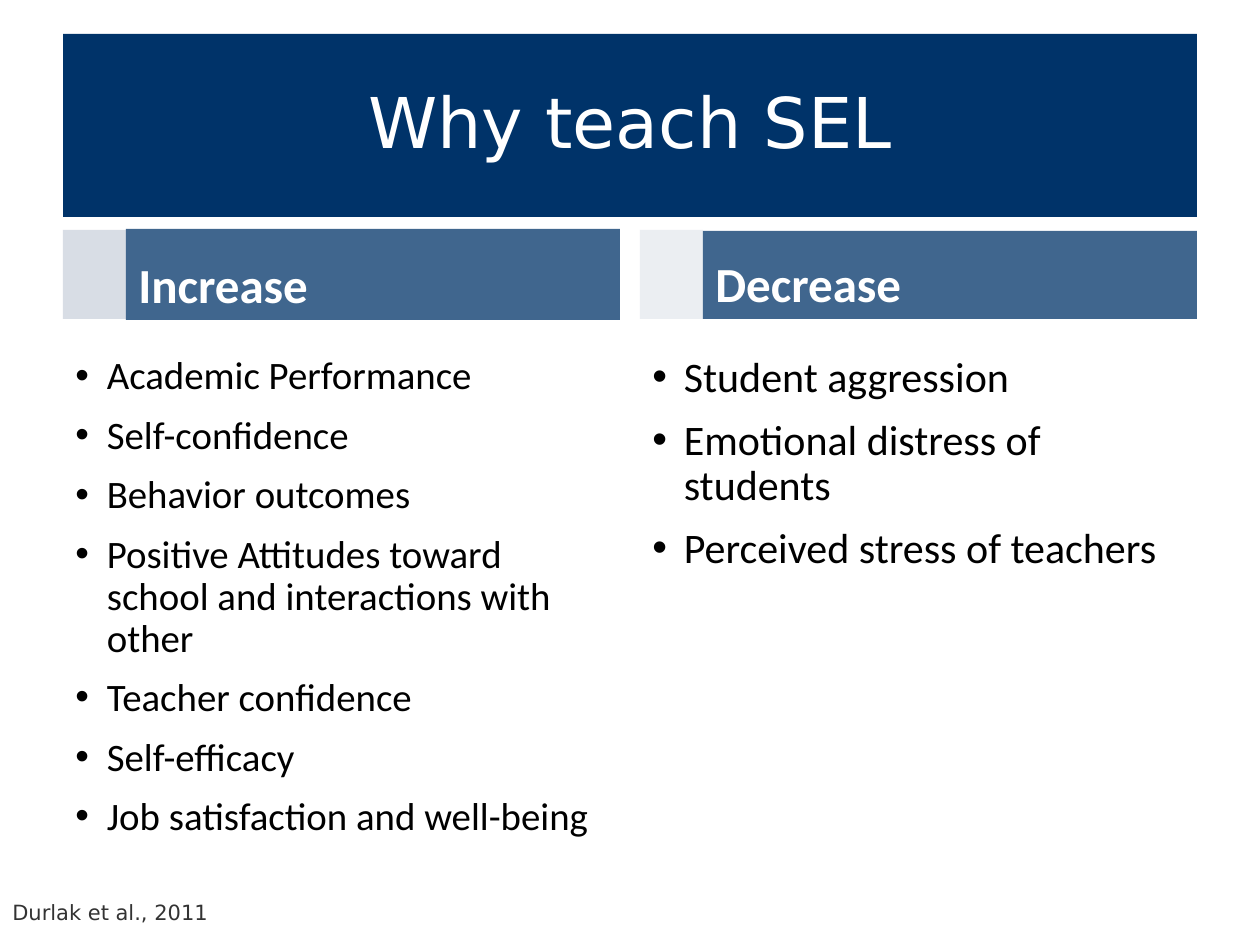
"""Build the slide on what teaching SEL increases and decreases."""
from lxml import etree
from pptx import Presentation
from pptx.dml.color import RGBColor
from pptx.enum.shapes import MSO_SHAPE
from pptx.enum.text import MSO_ANCHOR, PP_ALIGN
from pptx.oxml.ns import qn
from pptx.util import Inches, Pt

RECT = MSO_SHAPE.RECTANGLE
TOP, MIDDLE, BOTTOM = MSO_ANCHOR.TOP, MSO_ANCHOR.MIDDLE, MSO_ANCHOR.BOTTOM
LEFT, CENTER = PP_ALIGN.LEFT, PP_ALIGN.CENTER
PX = 7257
NAVY, TINT, WHITE, BLACK, GREY = "003369", "D8DDE5", "FFFFFF", "000000", "333333"


def rgb(value):
    return RGBColor.from_string(value)


def write(sp, text, size, color, font="Calibri", bold=False, align=LEFT,
          anchor=TOP, spacing=0.9, bullet=False):
    tf = sp.text_frame
    tf.word_wrap = True
    tf.vertical_anchor = anchor
    for i, line in enumerate(text.split("\n")):
        p = tf.add_paragraph() if i else tf.paragraphs[0]
        p.alignment = align
        p.line_spacing = spacing
        p.space_before = Pt(10 if i else 0)
        r = p.add_run()
        r.text = line
        r.font.name = font
        r.font.size = Pt(size)
        r.font.bold = bold
        r.font.color.rgb = rgb(color)
        if bullet:
            pPr = p._p.get_or_add_pPr()
            pPr.set("marL", str(Inches(0.25)))
            pPr.set("indent", str(-Inches(0.25)))
            etree.SubElement(pPr, qn("a:buFont"), typeface="Arial")
            etree.SubElement(pPr, qn("a:buChar"), char="•")


prs = Presentation()
prs.slide_width, prs.slide_height = Inches(10), Inches(7.5)
slide = prs.slides.add_slide(prs.slide_layouts[5])

title = slide.shapes.title
title.left, title.top, title.width, title.height = 63 * PX, 34 * PX, 1134 * PX, 183 * PX
title.fill.solid()
title.fill.fore_color.rgb = rgb(NAVY)
write(title, "Why teach SEL", 40, WHITE, font="DejaVu Sans", align=CENTER, anchor=MIDDLE)

increases = """Academic Performance
Self-confidence
Behavior outcomes
Positive Attitudes toward school and interactions with other
Teacher confidence
Self-efficacy
Job satisfaction and well-being"""
decreases = """Student aggression
Emotional distress of students
Perceived stress of teachers"""

columns = [
    (63, "Increase", 229, 91, 100, increases, 22.2),
    (640, "Decrease", 231, 88, 49, decreases, 24),
]
for x, heading, y, height, tint_alpha, items, size in columns:
    blocks = [(x, 230, 63, 89, TINT, tint_alpha), (x + 63, y, 494, height, NAVY, 75)]
    for left, top, w, h, color, alpha in blocks:
        sp = slide.shapes.add_shape(RECT, left * PX, top * PX, w * PX, h * PX)
        sp.shadow.inherit = False
        sp.line.fill.background()
        sp.fill.solid()
        sp.fill.fore_color.rgb = rgb(color)
        clr = sp._element.spPr.find(qn("a:solidFill"))[0]
        etree.SubElement(clr, qn("a:alpha"), val=str(alpha * 1000))
    write(sp, heading, 28, WHITE, bold=True, anchor=BOTTOM)
    body = slide.shapes.add_textbox(x * PX, 350 * PX, 557 * PX, 507 * PX)
    write(body, items, size, BLACK, bullet=True)

source = slide.shapes.add_textbox(0, 887 * PX, 251 * PX, 69 * PX)
source.text_frame.margin_top = source.text_frame.margin_bottom = Inches(0.1)
write(source, "Durlak et al., 2011", 12, GREY, font="DejaVu Sans", spacing=1.0)

prs.save("out.pptx")
